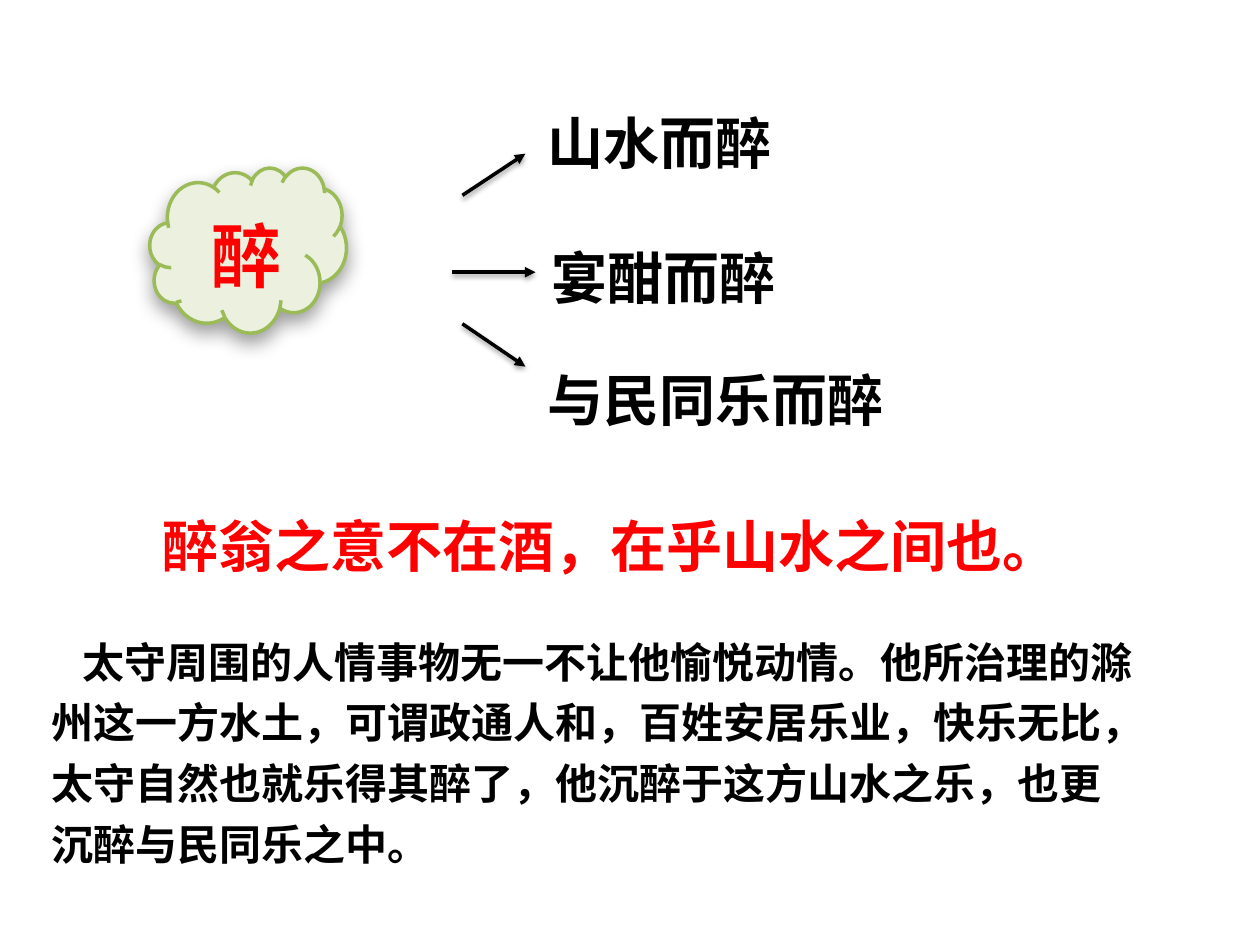
from dataclasses import dataclass

from lxml import etree
from pptx import Presentation
from pptx.dml.color import RGBColor
from pptx.enum.shapes import MSO_CONNECTOR, MSO_SHAPE
from pptx.oxml.ns import qn
from pptx.util import Inches, Pt

STRAIGHT = MSO_CONNECTOR.STRAIGHT
CLOUD = MSO_SHAPE.CLOUD
FONT = "Noto Sans CJK SC"
LINE_HEIGHT = 1.2
COLORS = {
    "ink": "000000",
    "accent": "FF0000",
    "cloud": "EBF1DE",
    "outline": "9BBB59",
}


@dataclass
class Label:
    text: str
    left: float
    top: float
    width: float
    height: float
    size: int = 32
    color: str = "ink"
    leading: float = LINE_HEIGHT
    indent: float = 0


@dataclass
class Arrow:
    start: tuple[float, float]
    end: tuple[float, float]


LABELS = [
    Label("山水而醉", 4.25, 0.77, 2.19, 0.64),
    Label("宴酣而醉", 4.28, 1.84, 2.14, 0.64),
    Label("与民同乐而醉", 4.25, 2.81, 3.25, 0.64),
    Label("醉翁之意不在酒，在乎山水之间也。", 1.19, 3.97, 7.45, 0.64, color="accent"),
    Label(
        "太守周围的人情事物无一不让他愉悦动情。他所治理的滁州这一方水土，"
        "可谓政通人和，百姓安居乐业，快乐无比，太守自然也就乐得其醉了，"
        "他沉醉于这方山水之乐，也更沉醉与民同乐之中。",
        0.31, 4.88, 8.85, 2.04, size=24, leading=LINE_HEIGHT * 1.2, indent=0.25,
    ),
    Label("醉", 1.58, 1.6, 0.78, 0.77, size=40, color="accent"),
]
ARROWS = [
    Arrow((3.67, 1.55), (4.17, 1.22)),
    Arrow((3.59, 2.16), (4.25, 2.16)),
    Arrow((3.67, 2.57), (4.17, 2.91)),
]


def rgb(name: str) -> RGBColor:
    """Return a palette colour."""
    return RGBColor.from_string(COLORS[name])


def add_shadow(shape, blur: float, distance: float) -> None:
    """Give a shape a soft shadow that falls straight down."""
    effects = etree.SubElement(shape._element.spPr, qn("a:effectLst"))
    shadow = etree.SubElement(
        effects, qn("a:outerShdw"), blurRad=str(Pt(blur)), dist=str(Pt(distance)),
        dir="5400000", rotWithShape="0",
    )
    color = etree.SubElement(shadow, qn("a:srgbClr"), val=COLORS["ink"])
    etree.SubElement(color, qn("a:alpha"), val="38000")


def add_arrow(slide, arrow: Arrow) -> None:
    """Draw a shadowed arrow."""
    connector = slide.shapes.add_connector(
        STRAIGHT, *map(Inches, arrow.start + arrow.end)
    )
    connector.line.color.rgb = rgb("ink")
    connector.line.width = Pt(2)
    etree.SubElement(connector.line._get_or_add_ln(), qn("a:tailEnd"), type="triangle")
    add_shadow(connector, 3.1, 1.6)


def add_cloud(slide) -> None:
    """Draw the cloud behind the key word."""
    cloud = slide.shapes.add_shape(CLOUD, *map(Inches, (1.19, 1.33, 1.56, 1.31)))
    cloud.fill.solid()
    cloud.fill.fore_color.rgb = rgb("cloud")
    cloud.line.color.rgb = rgb("outline")
    cloud.line.width = Pt(2)
    add_shadow(cloud, 11, 5)


def add_label(slide, label: Label) -> None:
    """Write one bold label."""
    box = slide.shapes.add_textbox(
        *map(Inches, (label.left, label.top, label.width, label.height))
    )
    frame = box.text_frame
    for name, value in {"word_wrap": True, "margin_top": Inches(0.09)}.items():
        setattr(frame, name, value)
    paragraph = frame.paragraphs[0]
    paragraph.line_spacing = Pt(round(label.size * label.leading, 1))
    if label.indent:
        paragraph._p.get_or_add_pPr().set("indent", str(Inches(label.indent)))
    run = paragraph.add_run()
    run.text = label.text
    font_format = {"name": FONT, "size": Pt(label.size), "bold": True}
    for name, value in font_format.items():
        setattr(run.font, name, value)
    run.font.color.rgb = rgb(label.color)
    etree.SubElement(run._r.get_or_add_rPr(), qn("a:ea"), typeface=FONT)


def main() -> None:
    """Build and save the slide."""
    presentation = Presentation()
    presentation.slide_width = Inches(10)
    presentation.slide_height = Inches(7.5)
    slide = presentation.slides.add_slide(presentation.slide_layouts[6])
    for arrow in ARROWS:
        add_arrow(slide, arrow)
    add_cloud(slide)
    for label in LABELS:
        add_label(slide, label)
    presentation.save("out.pptx")


if __name__ == "__main__":
    main()
